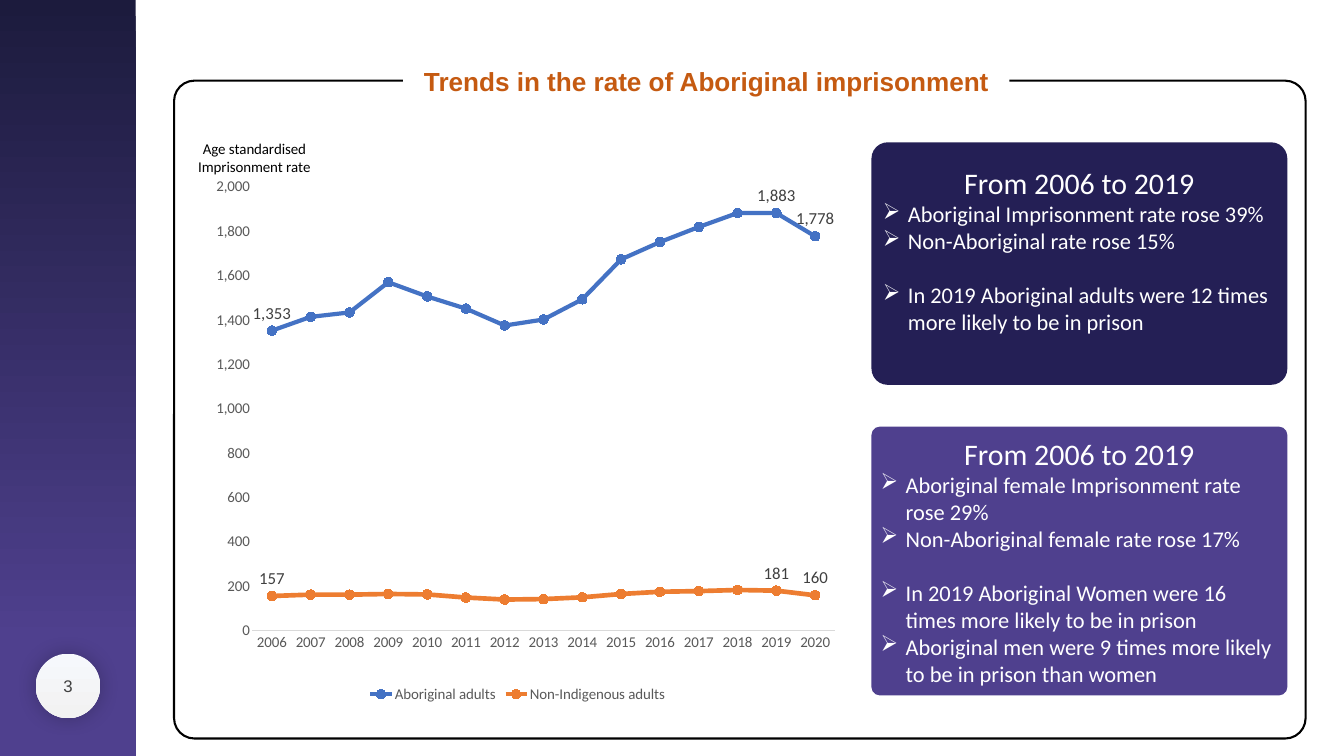
"""Build a slide on trends in the rate of Aboriginal imprisonment."""
import lxml.etree
import pptx
import pptx.chart.data
import pptx.dml.color
import pptx.enum.chart
import pptx.enum.shapes
import pptx.enum.text
import pptx.oxml.ns
import pptx.util

Cm, Pt = pptx.util.Cm, pptx.util.Pt
qn = pptx.oxml.ns.qn
SHAPE = pptx.enum.shapes.MSO_SHAPE
ALIGN = pptx.enum.text.PP_ALIGN
MIDDLE = pptx.enum.text.MSO_ANCHOR.MIDDLE
CHART = pptx.enum.chart

COLORS = {
    "white": "FFFFFF", "black": "000000", "title": "C55A11",
    "band_top": "1C1B3D", "navy": "241F55", "purple": "4F408E",
    "badge_top": "F6F8FC", "badge_bottom": "F2F2F2",
    "label": "404040", "axis_text": "595959", "axis_line": "D9D9D9",
    "blue": "4472C4", "orange": "ED7D31",
}
TITLE = "Trends in the rate of Aboriginal imprisonment"
SLIDE_NUMBER = "3"
YEARS = [str(year) for year in range(2006, 2021)]
AXIS_TITLE = ["Age standardised", "Imprisonment rate"]
SERIES = [
    ("Aboriginal adults", "blue", 4.5,
     [1353, 1415, 1435, 1571, 1507, 1452, 1376, 1403, 1494, 1674, 1752, 1820, 1883, 1883, 1778]),
    ("Non-Indigenous adults", "orange", 5,
     [157, 163, 163, 166, 164, 150, 141, 143, 151, 166, 176, 179, 184, 181, 160]),
]
LABELLED_YEARS = ["2006", "2019", "2020"]
PANEL_HEADING = "From 2006 to 2019"
PANELS = [
    {"top": 5.38, "height": 9.17, "corner": 0.067, "color": "navy", "bottom_inset": 1.16,
     "groups": [
         ["Aboriginal Imprisonment rate rose 39%", "Non-Aboriginal rate rose 15%"],
         ["In 2019 Aboriginal adults were 12 times more likely to be in prison"]]},
    {"top": 16.13, "height": 10.16, "corner": 0.031, "color": "purple", "bottom_inset": 0.13,
     "groups": [
         ["Aboriginal female Imprisonment rate rose 29%", "Non-Aboriginal female rate rose 17%"],
         ["In 2019 Aboriginal Women were 16 times more likely to be in prison",
          "Aboriginal men were 9 times more likely to be in prison than women"]]},
]
PANEL_LEFT, PANEL_WIDTH = 32.94, 15.72
GROUP_GAP = 29.3


def rgb(color):
    return pptx.dml.color.RGBColor.from_string(COLORS[color])


def apply(target, **values):
    for name, value in values.items():
        setattr(target, name, value)


def style(font, size, color, name="Calibri", bold=False):
    apply(font, size=Pt(size), name=name, bold=bold)
    font.color.rgb = rgb(color)


def paint(fill, color):
    fill.solid()
    fill.fore_color.rgb = rgb(color)


def add_shape(slide, kind, left, top, width, height, corner=None):
    shape = slide.shapes.add_shape(kind, Cm(left), Cm(top), Cm(width), Cm(height))
    shape.shadow.inherit = False
    shape.line.fill.background()
    if corner is not None:
        shape.adjustments[0] = corner
    return shape


def add_gradient(shape, stops):
    shape.fill.gradient()
    shape.fill.gradient_angle = 270
    for stop, (position, color) in zip(shape.fill.gradient_stops, stops):
        stop.position = position
        stop.color.rgb = rgb(color)


def add_child(parent, tag, **attributes):
    return lxml.etree.SubElement(parent, qn(tag), attributes)


def write(paragraph, text, size, color, alignment, **font_values):
    paragraph.alignment = alignment
    run = paragraph.add_run()
    run.text = text
    style(run.font, size, color, **font_values)


def add_side_band(slide):
    band = add_shape(slide, SHAPE.RECTANGLE, 0, 0, 5.13, 28.58)
    add_gradient(band, [(0, "band_top"), (0.85, "purple")])
    badge = add_shape(slide, SHAPE.OVAL, 1.35, 24.71, 2.44, 2.44)
    add_gradient(badge, [(0, "badge_top"), (1, "badge_bottom")])
    effects = badge._element.spPr.find(qn("a:effectLst"))
    shadow = add_child(effects, "a:outerShdw", blurRad=str(Pt(22)), dist="0")
    color = add_child(shadow, "a:srgbClr", val=COLORS["black"])
    add_child(color, "a:alpha", val="24000")
    apply(badge.text_frame, vertical_anchor=MIDDLE, margin_left=0, margin_right=0)
    write(badge.text_frame.paragraphs[0], SLIDE_NUMBER, 18, "label", ALIGN.CENTER, name="Arial")


def add_frame(slide):
    frame = add_shape(slide, SHAPE.ROUNDED_RECTANGLE, 6.58, 3.05, 42.77, 24.87, 0.031)
    frame.fill.background()
    frame.line.color.rgb = rgb("black")
    frame.line.width = Pt(2.25)


def set_layout(parent, index, **values):
    layout = parent.find(qn("c:layout"))
    if layout is None:
        layout = parent.makeelement(qn("c:layout"))
        parent.insert(index, layout)
    manual = add_child(layout, "c:manualLayout")
    for name, value in values.items():
        add_child(manual, "c:" + name, val=str(value))


def format_axes(chart):
    for axis in (chart.category_axis, chart.value_axis):
        apply(axis, has_major_gridlines=False, major_tick_mark=CHART.XL_TICK_MARK.NONE,
              minor_tick_mark=CHART.XL_TICK_MARK.NONE)
        style(axis.tick_labels.font, 16, "axis_text")
    category_line = chart.category_axis.format.line
    category_line.color.rgb = rgb("axis_line")
    category_line.width = Pt(0.75)
    axis = chart.value_axis
    apply(axis, minimum_scale=0, maximum_scale=2000, major_unit=200)
    apply(axis.tick_labels, number_format="#,##0", number_format_is_linked=False)
    axis.format.line.fill.background()
    frame = axis.axis_title.text_frame
    frame._txBody.bodyPr.set("rot", "0")
    for index, text in enumerate(AXIS_TITLE):
        paragraph = frame.add_paragraph() if index else frame.paragraphs[0]
        write(paragraph, text, 16, "black", ALIGN.CENTER)
    set_layout(axis.axis_title._element, 1, xMode="edge", yMode="edge", x=0.02, y=0.04)


def format_series(series, color, width):
    series.smooth = False
    series.format.line.color.rgb = rgb(color)
    series.format.line.width = Pt(width)
    apply(series.marker, style=CHART.XL_MARKER_STYLE.CIRCLE, size=10)
    paint(series.marker.format.fill, color)
    series.marker.format.line.color.rgb = rgb(color)
    series.data_labels.show_value = False
    for year in LABELLED_YEARS:
        label = series.points[YEARS.index(year)].data_label
        label.position = CHART.XL_LABEL_POSITION.ABOVE
        style(label.font, 18, "label")


def add_rate_chart(slide):
    data = pptx.chart.data.CategoryChartData(number_format="#,##0")
    data.categories = YEARS
    for name, _, _, values in SERIES:
        data.add_series(name, values)
    chart = slide.shapes.add_chart(CHART.XL_CHART_TYPE.LINE_MARKERS, Cm(6.91), Cm(4.27),
                                   Cm(25.32), Cm(22.43), data).chart
    style(chart.font, 16, "black")
    apply(chart, has_title=False, has_legend=True)
    apply(chart.legend, position=CHART.XL_LEGEND_POSITION.BOTTOM, include_in_layout=False)
    style(chart.legend.font, 16, "axis_text")
    chart.plots[0].vary_by_categories = False
    format_axes(chart)
    for series, (_, color, width, _) in zip(chart.plots[0].series, SERIES):
        format_series(series, color, width)
    plot_area = chart._chartSpace.find(".//" + qn("c:plotArea"))
    set_layout(plot_area, 0, layoutTarget="inner", xMode="edge", yMode="edge",
               x=0.104, y=0.125, w=0.869, h=0.748)


def add_panel(slide, panel):
    shape = add_shape(slide, SHAPE.ROUNDED_RECTANGLE, PANEL_LEFT, panel["top"],
                      PANEL_WIDTH, panel["height"], panel["corner"])
    paint(shape.fill, panel["color"])
    frame = shape.text_frame
    apply(frame, word_wrap=True, vertical_anchor=MIDDLE, margin_bottom=Cm(panel["bottom_inset"]))
    write(frame.paragraphs[0], PANEL_HEADING, 32, "white", ALIGN.CENTER)
    for group_index, group in enumerate(panel["groups"]):
        for index, text in enumerate(group):
            paragraph = frame.add_paragraph()
            if group_index and not index:
                paragraph.space_before = Pt(GROUP_GAP)
            properties = paragraph._p.get_or_add_pPr()
            properties.set("marL", str(Cm(0.95)))
            properties.set("indent", str(-Cm(0.95)))
            add_child(properties, "a:buChar", char="➢")
            write(paragraph, text, 24, "white", ALIGN.LEFT)


def add_title(slide):
    title = slide.shapes.title
    apply(title, left=Cm(15.24), top=Cm(2.34), width=Cm(22.91), height=Cm(1.47))
    paint(title.fill, "white")
    apply(title.text_frame, vertical_anchor=MIDDLE, word_wrap=True, margin_left=Cm(0.28),
          margin_right=Cm(0.28), margin_top=Cm(0.15), margin_bottom=Cm(0.15))
    write(title.text_frame.paragraphs[0], TITLE, 28, "title", ALIGN.CENTER, name="Arial", bold=True)
    slide.shapes._spTree.append(title._element)


def main():
    presentation = pptx.Presentation()
    apply(presentation, slide_width=Cm(50.8), slide_height=Cm(28.58))
    slide = presentation.slides.add_slide(presentation.slide_layouts[5])
    add_side_band(slide)
    add_frame(slide)
    add_rate_chart(slide)
    for panel in PANELS:
        add_panel(slide, panel)
    add_title(slide)
    presentation.save("out.pptx")


if __name__ == "__main__":
    main()
